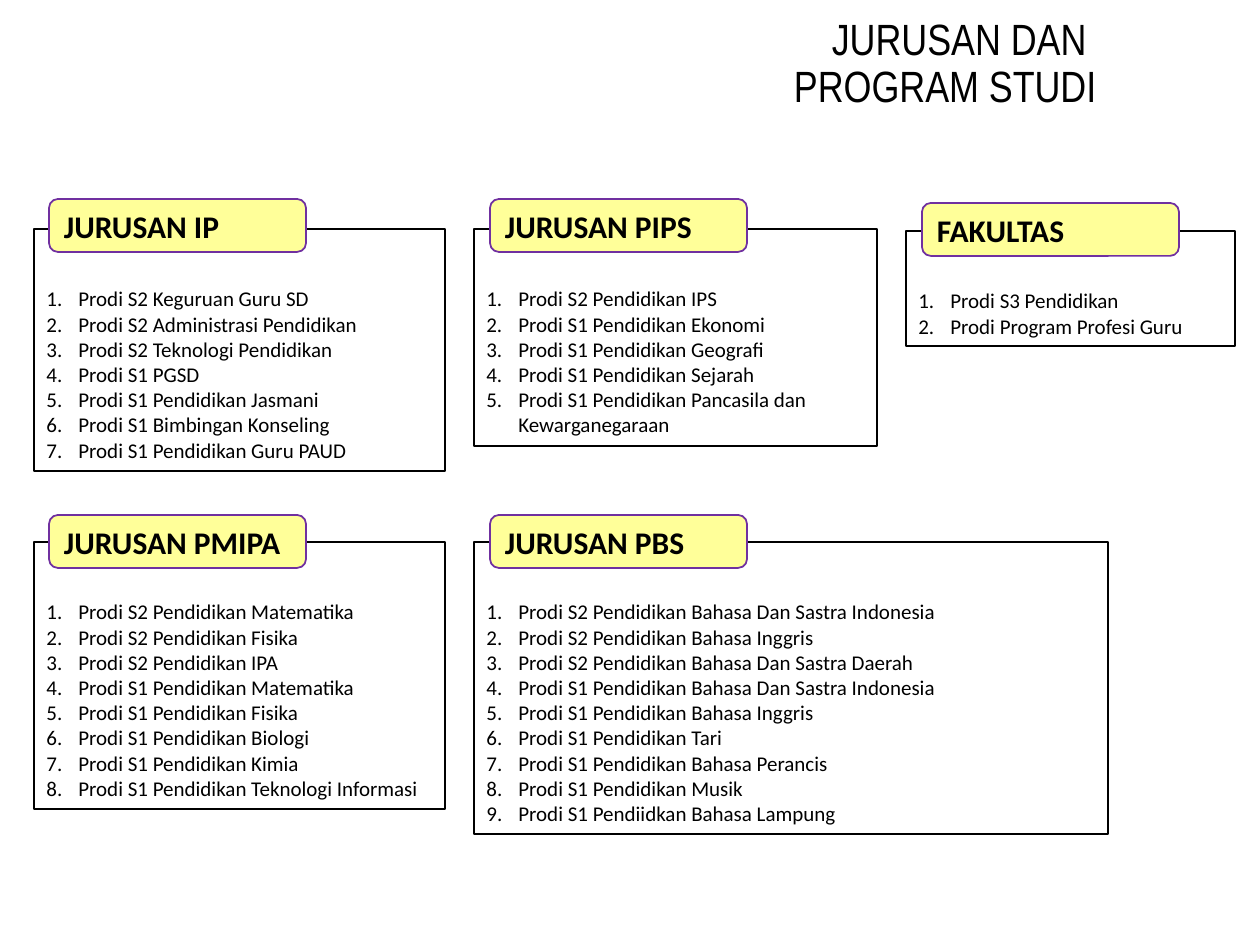
import dataclasses

import lxml.etree
import pptx
import pptx.dml.color
import pptx.enum.shapes
import pptx.enum.text
import pptx.oxml.ns
import pptx.util

PX = 914400 / 126  # EMU in one px
BLACK = pptx.dml.color.RGBColor(0x00, 0x00, 0x00)
YELLOW = pptx.dml.color.RGBColor(0xFF, 0xFF, 0x99)
PURPLE = pptx.dml.color.RGBColor(0x70, 0x30, 0xA0)

TAB_WIDTH, TAB_HEIGHT = 257, 53
LIST_TOP = 57
INDENT = 32
COL_1, COL_2, COL_3 = 34, 474, 906
ROW_1, ROW_2 = 229, 542


@dataclasses.dataclass
class Group:
    """A department: its framed list and the tab over the frame's top edge."""
    name: str
    left: int
    top: int
    width: int
    height: int
    tab_left: int
    tab_top: int
    items: list[str]


GROUPS = [
    Group("JURUSAN IP", COL_1, ROW_1, 411, 242, 49, 199, [
        "Prodi S2 Keguruan Guru SD",
        "Prodi S2 Administrasi Pendidikan",
        "Prodi S2 Teknologi Pendidikan",
        "Prodi S1 PGSD",
        "Prodi S1 Pendidikan Jasmani",
        "Prodi S1 Bimbingan Konseling",
        "Prodi S1 Pendidikan Guru PAUD",
    ]),
    Group("JURUSAN PMIPA", COL_1, ROW_2, 411, 267, 49, 515, [
        "Prodi S2 Pendidikan Matematika",
        "Prodi S2 Pendidikan Fisika",
        "Prodi S2 Pendidikan IPA",
        "Prodi S1 Pendidikan Matematika",
        "Prodi S1 Pendidikan Fisika",
        "Prodi S1 Pendidikan Biologi",
        "Prodi S1 Pendidikan Kimia",
        "Prodi S1 Pendidikan Teknologi Informasi",
    ]),
    Group("JURUSAN PIPS", COL_2, ROW_1, 403, 217, 490, 199, [
        "Prodi S2 Pendidikan IPS",
        "Prodi S1 Pendidikan Ekonomi",
        "Prodi S1 Pendidikan Geografi",
        "Prodi S1 Pendidikan Sejarah",
        "Prodi S1 Pendidikan Pancasila dan Kewarganegaraan",
    ]),
    Group("JURUSAN PBS", COL_2, ROW_2, 634, 292, 490, 515, [
        "Prodi S2 Pendidikan Bahasa Dan Sastra Indonesia",
        "Prodi S2 Pendidikan Bahasa Inggris",
        "Prodi S2 Pendidikan Bahasa Dan Sastra Daerah",
        "Prodi S1 Pendidikan Bahasa Dan Sastra Indonesia",
        "Prodi S1 Pendidikan Bahasa Inggris",
        "Prodi S1 Pendidikan Tari",
        "Prodi S1 Pendidikan Bahasa Perancis",
        "Prodi S1 Pendidikan Musik",
        "Prodi S1 Pendiidkan Bahasa Lampung",
    ]),
    Group("FAKULTAS", COL_3, 231, 329, 115, 922, 203, [
        "Prodi S3 Pendidikan",
        "Prodi Program Profesi Guru",
    ]),
]


def emu(px: int) -> int:
    return round(px * PX)


def add_run(para, text: str, font: str, size: int, bold: bool = False) -> None:
    run = para.add_run()
    run.text = text
    run.font.name = font
    run.font.size = pptx.util.Pt(size)
    run.font.bold = bold
    run.font.color.rgb = BLACK


def number(para) -> None:
    """Give the paragraph an automatic number and a hanging indent."""
    props = para._p.get_or_add_pPr()
    props.set("marL", str(emu(INDENT)))
    props.set("indent", str(-emu(INDENT)))
    mark = lxml.etree.SubElement(props, pptx.oxml.ns.qn("a:buAutoNum"))
    mark.set("type", "arabicPeriod")


def add_box(slide, kind, left: int, top: int, width: int, height: int,
            line, weight: float):
    shape = slide.shapes.add_shape(
        kind, emu(left), emu(top), emu(width), emu(height))
    shape.shadow.inherit = False
    shape.fill.background()
    shape.line.color.rgb = line
    shape.line.width = pptx.util.Pt(weight)
    shape.text_frame.word_wrap = True
    return shape


def add_list(slide, group: Group) -> None:
    shape = add_box(slide, pptx.enum.shapes.MSO_SHAPE.RECTANGLE, group.left,
                    group.top, group.width, group.height, BLACK, 0.75)
    frame = shape.text_frame
    frame.margin_top = emu(LIST_TOP)
    frame.vertical_anchor = pptx.enum.text.MSO_ANCHOR.TOP
    frame.auto_size = pptx.enum.text.MSO_AUTO_SIZE.SHAPE_TO_FIT_TEXT
    for index, item in enumerate(group.items):
        para = frame.add_paragraph() if index else frame.paragraphs[0]
        para.alignment = pptx.enum.text.PP_ALIGN.LEFT
        number(para)
        add_run(para, item, "Calibri", 12)


def add_tab(slide, group: Group) -> None:
    shape = add_box(slide, pptx.enum.shapes.MSO_SHAPE.ROUNDED_RECTANGLE,
                    group.tab_left, group.tab_top, TAB_WIDTH, TAB_HEIGHT,
                    PURPLE, 1)
    shape.fill.solid()
    shape.fill.fore_color.rgb = YELLOW
    shape.text_frame.vertical_anchor = pptx.enum.text.MSO_ANCHOR.MIDDLE
    para = shape.text_frame.paragraphs[0]
    para.alignment = pptx.enum.text.PP_ALIGN.LEFT
    add_run(para, group.name, "Calibri", 18, bold=True)


def set_title(slide) -> None:
    title = slide.shapes.title
    title.left, title.top = emu(553), emu(14)
    title.width, title.height = emu(556), emu(101)
    frame = title.text_frame
    frame.auto_size = pptx.enum.text.MSO_AUTO_SIZE.NONE
    frame.vertical_anchor = pptx.enum.text.MSO_ANCHOR.MIDDLE
    para = frame.paragraphs[0]
    para.alignment = pptx.enum.text.PP_ALIGN.RIGHT
    para.line_spacing = 0.9
    add_run(para, "JURUSAN DAN ", "Arial Narrow", 25)
    para.add_line_break()
    add_run(para, "PROGRAM STUDI", "Arial Narrow", 25)


def main() -> None:
    deck = pptx.Presentation()
    deck.slide_width = emu(1260)
    deck.slide_height = emu(945)
    slide = deck.slides.add_slide(deck.slide_layouts.get_by_name("Title Only"))
    set_title(slide)
    for group in GROUPS:
        add_list(slide, group)
        add_tab(slide, group)
    deck.save("out.pptx")


if __name__ == "__main__":
    main()
